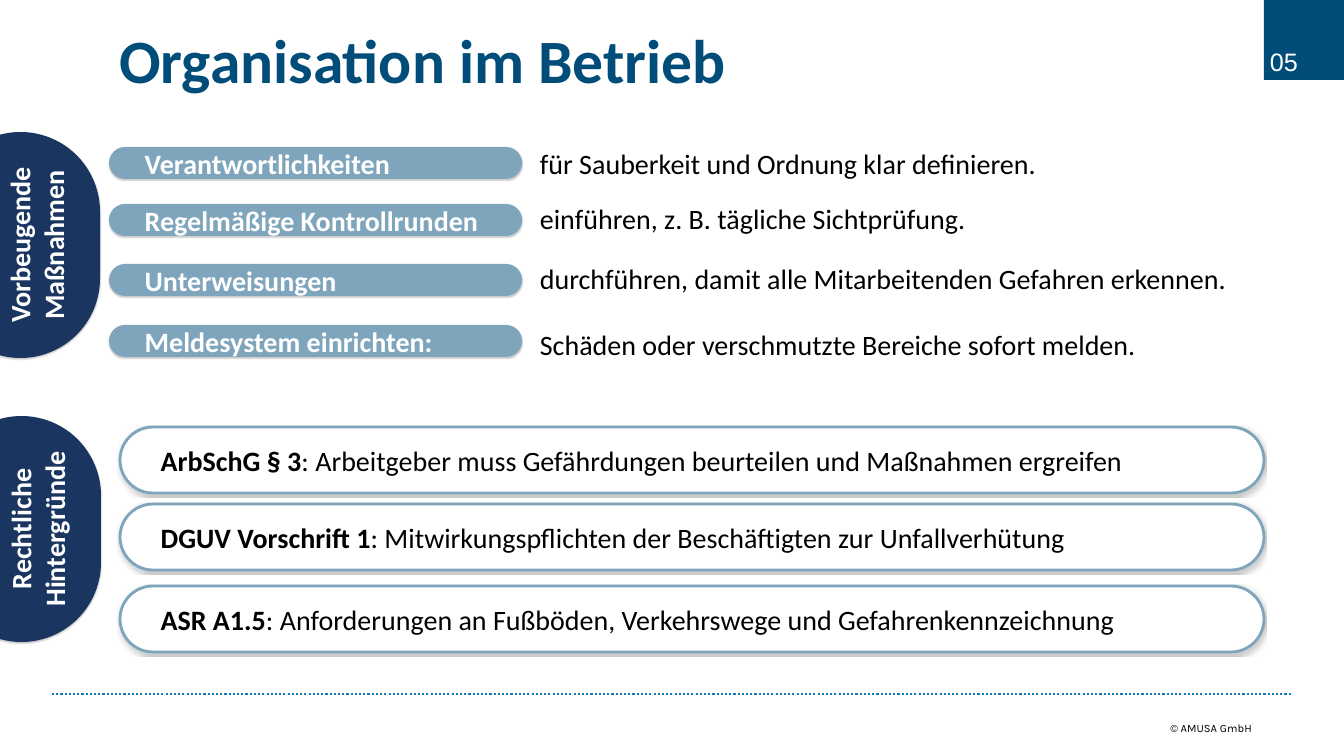
import pptx
import pptx.util
import pptx.dml.color
import pptx.enum.dml
import pptx.enum.shapes
import pptx.enum.text
import pptx.oxml
import pptx.oxml.ns

# Content
TITLE = "Organisation im Betrieb"
PAGE = "05"
COPYRIGHT = "© AMUSA GmbH"
TABS = [  # left, top, label
    (-59, 132, "Vorbeugende Maßnahmen"),
    (-58, 416, "Rechtliche Hintergründe"),
]
MEASURES = [  # pill top, text top, keyword, explanation
    (147, 142, "Verantwortlichkeiten", "für Sauberkeit und Ordnung klar definieren."),
    (204, 197, "Regelmäßige Kontrollrunden", "einführen, z. B. tägliche Sichtprüfung."),
    (264, 257, "Unterweisungen", "durchführen, damit alle Mitarbeitenden Gefahren erkennen."),
    (325, 323, "Meldesystem einrichten:", "Schäden oder verschmutzte Bereiche sofort melden."),
]
LAWS = [  # top, source, duty
    (427, "ArbSchG § 3", ": Arbeitgeber muss Gefährdungen beurteilen und Maßnahmen ergreifen"),
    (504, "DGUV Vorschrift 1", ": Mitwirkungspflichten der Beschäftigten zur Unfallverhütung"),
    (586, "ASR A1.5", ": Anforderungen an Fußböden, Verkehrswege und Gefahrenkennzeichnung"),
]
COLORS = {"white": "FFFFFF", "black": "000000", "blue": "004D7A",
          "navy": "193560", "steel": "7FA5BC", "rule": "1179BF"}
W, H = 1344, 756
SCALE = 914400 / 100.8

Pt = pptx.util.Pt
PP_ALIGN = pptx.enum.text.PP_ALIGN
ANCHOR = pptx.enum.text.MSO_ANCHOR
SHAPE = pptx.enum.shapes.MSO_SHAPE


def px(n):
    return pptx.util.Emu(round(n * SCALE))


def rgb(name):
    return pptx.dml.color.RGBColor.from_string(COLORS[name])


def add_run(p, text, color, size=20, bold=False, font="Calibri"):
    r = p.add_run()
    r.text = text
    r.font.name, r.font.size, r.font.bold = font, Pt(size), bold
    r.font.color.rgb = rgb(color)


def set_insets(tf, left=0):
    tf.margin_left = px(left)
    tf.margin_top = tf.margin_right = tf.margin_bottom = 0


def add_text(box, wrap=True):
    tf = s.shapes.add_textbox(*map(px, box)).text_frame
    tf.word_wrap = wrap
    return tf


def add_block(shape, box, fill, line=None):
    sp = s.shapes.add_shape(shape, *map(px, box))
    sp.fill.solid()
    sp.fill.fore_color.rgb = rgb(fill)
    if line:
        sp.line.color.rgb = rgb(line)
        sp.line.width = Pt(2)
    else:
        sp.line.fill.background()
    sp.shadow.inherit = False
    return sp


def add_rounded(box, fill, line=None, align=PP_ALIGN.LEFT):
    """Add a fully rounded block with a soft shadow; return its text frame."""
    sp = add_block(SHAPE.ROUNDED_RECTANGLE, box, fill, line)
    sp.adjustments[0] = 0.5
    effects = sp._element.spPr.find(pptx.oxml.ns.qn("a:effectLst"))
    effects.append(pptx.oxml.parse_xml(
        f'<a:outerShdw {pptx.oxml.ns.nsdecls("a")} blurRad="12700" dist="12700" '
        f'dir="5400000" rotWithShape="0"><a:srgbClr val="{COLORS["black"]}">'
        '<a:alpha val="20000"/></a:srgbClr></a:outerShdw>'))
    tf = sp.text_frame
    tf.word_wrap = True
    tf.vertical_anchor = ANCHOR.MIDDLE
    set_insets(tf, 31)
    tf.paragraphs[0].alignment = align
    return tf


prs = pptx.Presentation()
prs.slide_width, prs.slide_height = px(W), px(H)
s = prs.slides.add_slide(prs.slide_layouts[5])

# Title
title = s.shapes.title
title.left, title.top, title.width, title.height = map(px, (109, 46, 889, 56))
tf = title.text_frame
tf.auto_size = pptx.enum.text.MSO_AUTO_SIZE.NONE
tf.vertical_anchor = ANCHOR.TOP
p = tf.paragraphs[0]
p.alignment = PP_ALIGN.LEFT
p.line_spacing = Pt(32)
add_run(p, TITLE, "blue", 44, True)

# Footer
rule = s.shapes.add_connector(pptx.enum.shapes.MSO_CONNECTOR.STRAIGHT,
                              *map(px, (52, 694, 1291, 694)))
rule.line.color.rgb = rgb("rule")
rule.line.width = Pt(1.5)
rule.line.dash_style = pptx.enum.dml.MSO_LINE.ROUND_DOT
rule._element.spPr.append(
    pptx.oxml.parse_xml(f'<a:effectLst {pptx.oxml.ns.nsdecls("a")}/>'))
tf = add_text((1120, 720, 132, 14))
set_insets(tf)
tf.vertical_anchor = ANCHOR.MIDDLE
p = tf.paragraphs[0]
p.alignment = PP_ALIGN.RIGHT
p.line_spacing = Pt(10.7)
add_run(p, COPYRIGHT, "black", 8, font="Karla")

# Page number
add_block(SHAPE.RECTANGLE, (1264, 0, 80, 80), "blue")
tf = add_text((1270, 46, 30, 30), wrap=False)
set_insets(tf)
add_run(tf.paragraphs[0], PAGE, "white", 18, font="Arial")

# Section tabs, cut by the left edge
for left, top, label in TABS:
    tf = add_rounded((left, top, 159, 226), "navy", align=PP_ALIGN.CENTER)
    tf._txBody.bodyPr.set("vert", "vert270")
    add_run(tf.paragraphs[0], label, "white", bold=True)

# Preventive measures
for pill_top, text_top, keyword, explanation in MEASURES:
    tf = add_rounded((109, pill_top, 413, 32), "steel")
    add_run(tf.paragraphs[0], keyword, "white", bold=True)
    tf = add_text((530, text_top, W - 530, 44))
    add_run(tf.paragraphs[0], explanation, "black")

# Legal background
for top, source, duty in LAWS:
    p = add_rounded((120, top, 1144, 66), "white", "steel").paragraphs[0]
    add_run(p, source, "black", bold=True)
    add_run(p, duty, "black")

prs.save("out.pptx")
